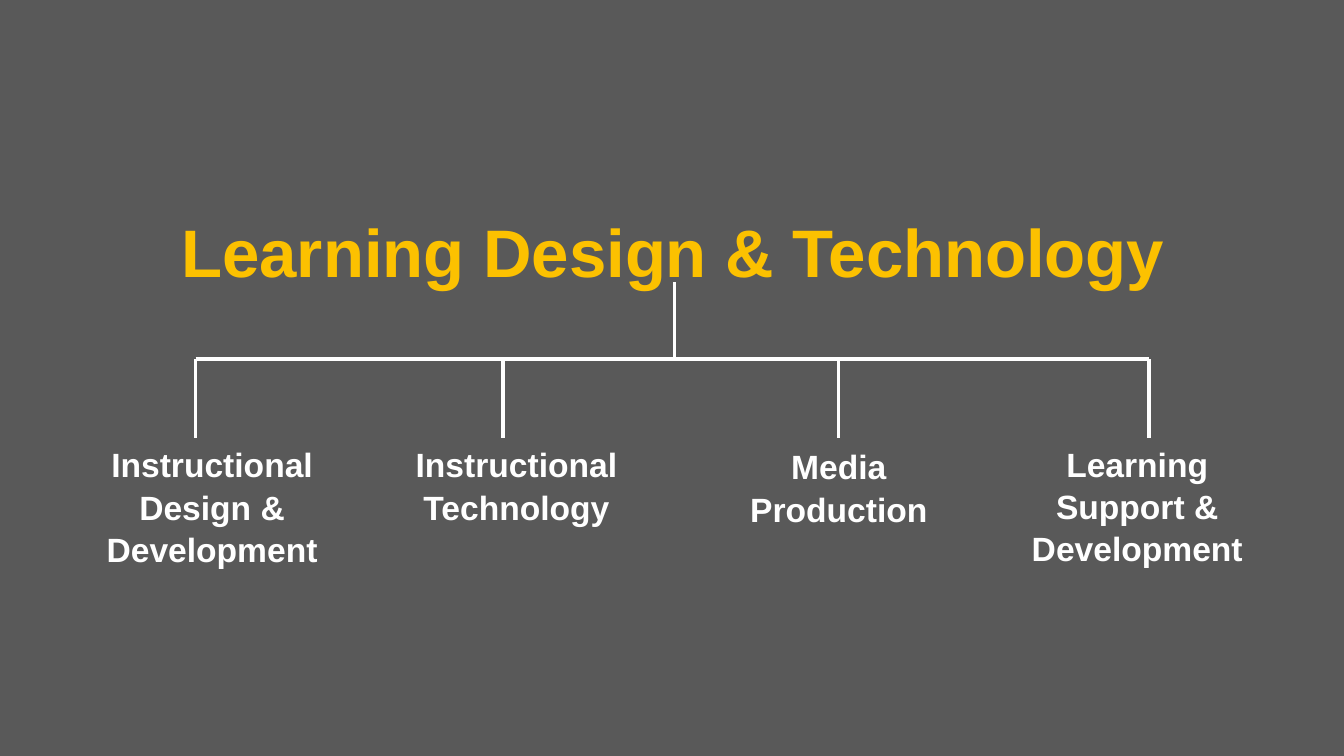
from pptx import Presentation
from pptx.dml.color import RGBColor
from pptx.enum.shapes import MSO_CONNECTOR
from pptx.enum.text import MSO_ANCHOR, PP_ALIGN
from pptx.oxml.ns import qn
from pptx.util import Cm, Pt

STRAIGHT = MSO_CONNECTOR.STRAIGHT
TOP = MSO_ANCHOR.TOP
CENTER = PP_ALIGN.CENTER

# Content: department, then its units as (name, branch x, text left, text top, text width) in cm
DEPARTMENT = "Learning Design & Technology"
UNITS = [
    ("Instructional Design & Development", 4.93, 2.31, 11.02, 6.07),
    ("Instructional Technology", 12.67, 9.98, 11.02, 6.07),
    ("Media Production", 21.13, 18.36, 11.07, 5.56),
    ("Learning Support & Development", 28.96, 25.7, 11.0, 5.92),
]

# Layout in cm and colours
SLIDE_WIDTH, SLIDE_HEIGHT = 33.87, 19.05
TRUNK_X, TRUNK_TOP = 17.0, 7.11
BAR_Y, BRANCH_LENGTH = 9.05, 1.98
GREY, GOLD, WHITE = "595959", "FCC100", "FFFFFF"


def color(code):
    return RGBColor.from_string(code)


def write(holder, text, size, code):
    frame = holder.text_frame
    frame.word_wrap = True
    frame.vertical_anchor = TOP
    frame.text = text
    paragraph = frame.paragraphs[0]
    paragraph.alignment = CENTER
    paragraph.line_spacing = 1.05
    font = paragraph.font
    font.name, font.size, font.bold = "Arial", Pt(size), True
    font.color.rgb = color(code)


def draw_line(slide, x1, y1, x2, y2):
    line = slide.shapes.add_connector(STRAIGHT, Cm(x1), Cm(y1), Cm(x2), Cm(y2))
    line.line.color.rgb = color(WHITE)
    line.line.width = Pt(2.5)
    properties = line._element.spPr
    properties.append(properties.makeelement(qn("a:effectLst"), {}))


def main():
    deck = Presentation()
    deck.slide_width, deck.slide_height = Cm(SLIDE_WIDTH), Cm(SLIDE_HEIGHT)
    slide = deck.slides.add_slide(deck.slide_layouts[5])
    background = slide.background.fill
    background.solid()
    background.fore_color.rgb = color(GREY)

    # Department heading
    heading = slide.shapes.title
    heading.left, heading.top = Cm(2.77), Cm(5.08)
    heading.width, heading.height = Cm(28.4), Cm(2.31)
    write(heading, DEPARTMENT, 48, GOLD)

    # Trunk and crossbar
    draw_line(slide, TRUNK_X, TRUNK_TOP, TRUNK_X, BAR_Y)
    draw_line(slide, UNITS[0][1], BAR_Y, UNITS[-1][1], BAR_Y)

    # One branch and label per unit
    for name, branch_x, left, top, width in UNITS:
        draw_line(slide, branch_x, BAR_Y, branch_x, BAR_Y + BRANCH_LENGTH)
        height = 3.33 if "&" in name else 2.31
        label = slide.shapes.add_textbox(Cm(left), Cm(top), Cm(width), Cm(height))
        write(label, name, 24, WHITE)

    deck.save("out.pptx")


if __name__ == "__main__":
    main()
